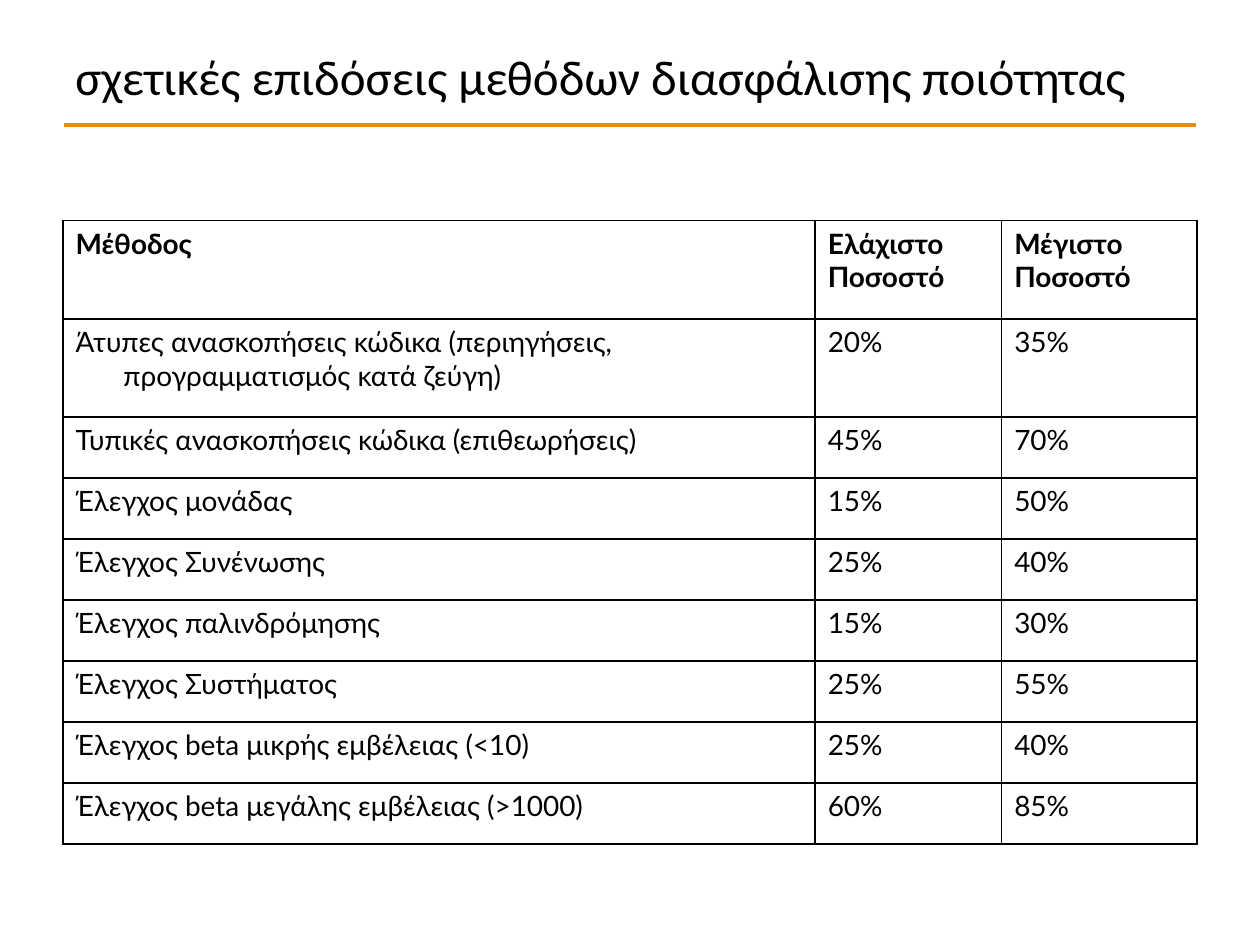
from lxml.etree import SubElement
from pptx import Presentation
from pptx.dml.color import RGBColor
from pptx.enum.shapes import MSO_CONNECTOR
from pptx.enum.text import MSO_ANCHOR
from pptx.oxml.ns import qn
from pptx.util import Inches, Pt

COLORS = {"text": "000000", "accent": "DC9016", "border": "000000"}
SLIDE_WIDTH, SLIDE_HEIGHT = Inches(10), Inches(7.5)
MARGIN = 0.05
COLUMN_WIDTHS = [5.97, 1.48, 1.55]
TALL_ROW, ROW = 0.78, 0.484
HANGING = Inches(0.38)
HEADINGS = ("Μέθοδος", "Ελάχιστο Ποσοστό", "Μέγιστο Ποσοστό")
METHODS = [
    ("Άτυπες ανασκοπήσεις κώδικα (περιηγήσεις, προγραμματισμός κατά ζεύγη)", 20, 35),
    ("Τυπικές ανασκοπήσεις κώδικα (επιθεωρήσεις)", 45, 70),
    ("Έλεγχος μονάδας", 15, 50),
    ("Έλεγχος Συνένωσης", 25, 40),
    ("Έλεγχος παλινδρόμησης", 15, 30),
    ("Έλεγχος Συστήματος", 25, 55),
    ("Έλεγχος beta μικρής εμβέλειας (<10)", 25, 40),
    ("Έλεγχος beta μεγάλης εμβέλειας (>1000)", 60, 85),
]


def across(share):
    """Return a share of the slide width."""
    return int(SLIDE_WIDTH * share)


def down(share):
    """Return a share of the slide height."""
    return int(SLIDE_HEIGHT * share)


def add_run(paragraph, wording, font_name, size, bold=False):
    """Append one formatted run to a paragraph."""
    run = paragraph.add_run()
    run.text = wording
    run.font.name = font_name
    run.font.size = Pt(size)
    run.font.bold = bold
    run.font.color.rgb = RGBColor.from_string(COLORS["text"])


def add_title(slide, wording):
    """Place the heading above the rule."""
    heading = slide.shapes.add_textbox(
        across(MARGIN), down(0.04), across(1 - 2 * MARGIN), Inches(0.61))
    heading.text_frame.word_wrap = True
    heading.text_frame.vertical_anchor = MSO_ANCHOR.MIDDLE
    add_run(heading.text_frame.paragraphs[0], wording, "Calibri", 28)


def add_rule(slide):
    """Draw the coloured rule under the heading."""
    rule = slide.shapes.add_connector(
        MSO_CONNECTOR.STRAIGHT, across(0.051), down(0.132), across(0.949), down(0.132))
    rule.line.color.rgb = RGBColor.from_string(COLORS["accent"])
    rule.line.width = Pt(2.5)
    SubElement(rule._element.spPr, qn("a:effectLst"))


def add_borders(cell):
    """Outline all four sides of a cell."""
    properties = cell._tc.get_or_add_tcPr()
    for position, side in enumerate(("lnL", "lnR", "lnT", "lnB")):
        border = SubElement(properties, qn(f"a:{side}"), w=str(Pt(1)))
        fill = SubElement(border, qn("a:solidFill"))
        SubElement(fill, qn("a:srgbClr"), val=COLORS["border"])
        properties.insert(position, border)


def fill_cell(cell, wording, bold, hanging):
    """Write a cell with plain background, borders and optional hanging indent."""
    cell.fill.background()
    add_borders(cell)
    paragraph = cell.text_frame.paragraphs[0]
    if hanging:
        indents = paragraph._p.get_or_add_pPr()
        indents.set("marL", str(HANGING))
        indents.set("indent", str(-HANGING))
    add_run(paragraph, wording, "Lato", 16, bold)


def add_methods_table(slide):
    """Build the table of quality assurance methods."""
    rows = [HEADINGS] + [(name, f"{low}%", f"{high}%") for name, low, high in METHODS]
    heights = [TALL_ROW] * 2 + [ROW] * (len(rows) - 2)
    table = slide.shapes.add_table(
        len(rows), len(HEADINGS), across(MARGIN), Inches(1.75),
        across(1 - 2 * MARGIN), Inches(sum(heights))).table
    table.first_row = True
    table.horz_banding = False
    for column, width in zip(table.columns, COLUMN_WIDTHS):
        column.width = Inches(width)
    for row_index, (wordings, height) in enumerate(zip(rows, heights)):
        table.rows[row_index].height = Inches(height)
        is_heading = row_index == 0
        for column_index, wording in enumerate(wordings):
            fill_cell(table.cell(row_index, column_index), wording, is_heading,
                      hanging=not is_heading or column_index == 0)


def main():
    """Assemble and save the slide."""
    presentation = Presentation()
    presentation.slide_width, presentation.slide_height = SLIDE_WIDTH, SLIDE_HEIGHT
    slide = presentation.slides.add_slide(presentation.slide_layouts[6])
    add_rule(slide)
    add_title(slide, "σχετικές επιδόσεις μεθόδων διασφάλισης ποιότητας")
    add_methods_table(slide)
    presentation.save("out.pptx")


if __name__ == "__main__":
    main()
